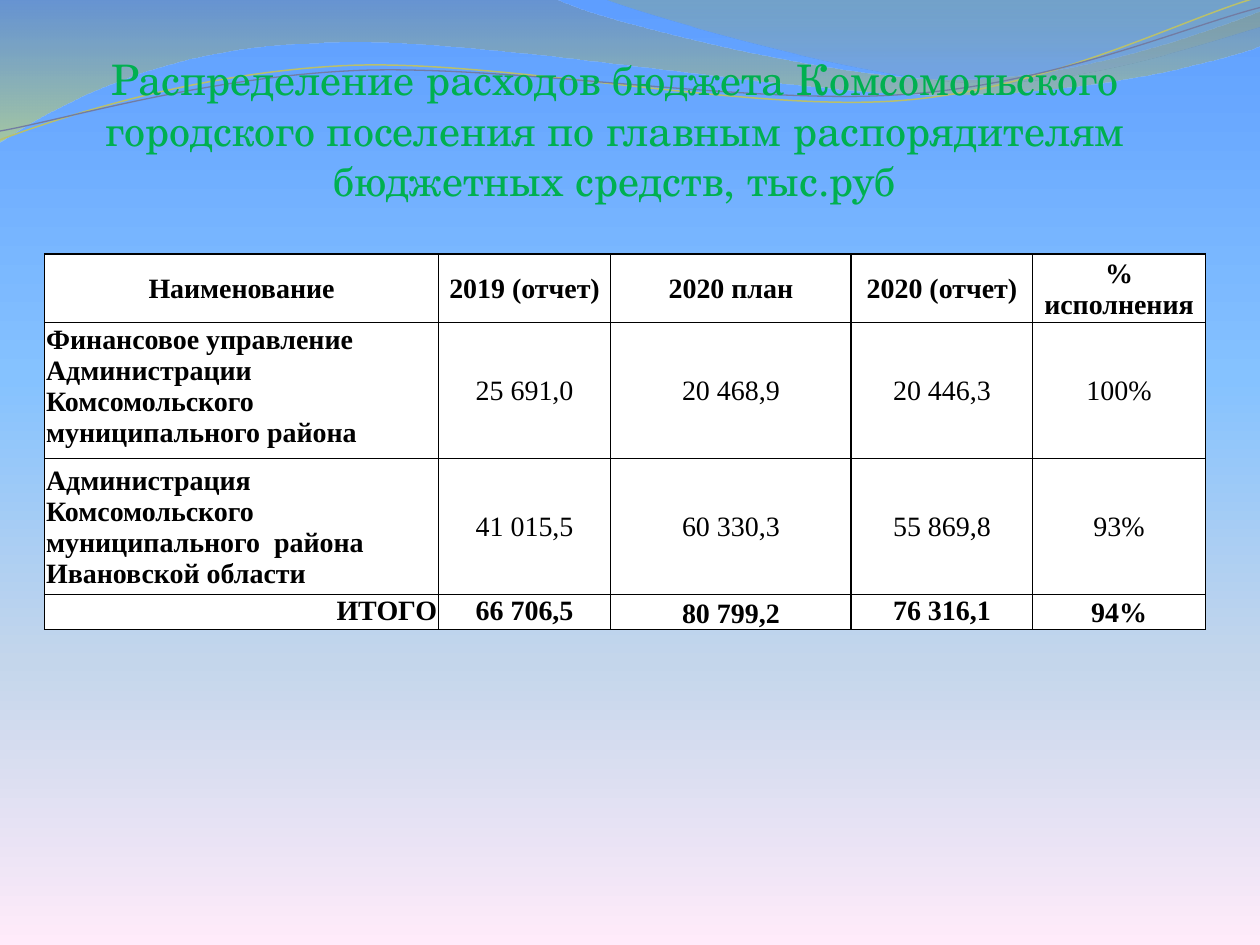
from dataclasses import dataclass

from pptx import Presentation
from pptx.dml.color import RGBColor
from pptx.enum.text import MSO_ANCHOR as Anchor, PP_ALIGN as Align
from pptx.oxml import parse_xml
from pptx.oxml.ns import nsdecls, qn
from pptx.util import Cm, Pt

COLORS = {
    "title": "00B050", "text": "000000", "cell": "FFFFFF", "border": "000000",
    "sky": "5E9EFF", "light sky": "85C2FF", "haze": "C4D6EB", "pink": "FFEBFA",
    "slate": "72889B", "lime": "D3DE57", "olive": "A4AC50", "steel": "84A3BD",
    "yellow line": "B9C06C", "grey line": "727CA3",
}
UNITS = 1000  # path units to the inch; wave coordinates are in inches

Point = tuple[float, float]


@dataclass
class Stop:
    position: int
    color: str
    opacity: int = 100


@dataclass
class Wave:
    """A segment of one point is straight, one of three points is a cubic curve."""
    start: Point
    segments: list[tuple[Point, ...]]
    stops: list[Stop] | None = None
    line: str = ""
    width: float = 0


@dataclass
class Cell:
    text: str
    bold: bool = False
    align: Align = Align.CENTER
    anchor: Anchor = Anchor.MIDDLE


SKY = [Stop(0, "sky"), Stop(40, "light sky"), Stop(70, "haze"), Stop(100, "pink")]

WAVES = [
    Wave((0, 0),
         [((4.4, -0.01),),
          ((4.76, 0.17), (6.64, 0.63), (7.58, 0.63)),
          ((8.53, 0.63), (9.58, 0.26), (10, 0.09)),
          ((10.01, 0.36),),
          ((9.83, 0.44), (8.7, 0.76), (7.46, 0.75)),
          ((6.22, 0.75), (3.82, 0.28), (2.57, 0.34)),
          ((1.29, 0.36), (0.46, 0.83), (-0.01, 1.13))],
         [Stop(0, "slate", 45), Stop(100, "lime", 55)]),
    Wave((4.79, -0.01),
         [((5.09, 0.11), (6.82, 0.62), (7.69, 0.65)),
          ((8.56, 0.69), (9.61, 0.32), (10, 0.21)),
          ((10, 0),)],
         [Stop(0, "olive", 30), Stop(80, "steel", 45)]),
    Wave((0, 1.11),
         [((0.48, 0.93), (1.58, 0.57), (2.77, 0.52)),
          ((3.95, 0.47), (5.93, 0.89), (7.13, 0.8)),
          ((8.33, 0.71), (9.38, 0.15), (9.98, -0.02))],
         line="yellow line", width=0.85),
    Wave((0, 1.04),
         [((0.47, 0.96), (1.64, 0.61), (2.83, 0.56)),
          ((4.03, 0.51), (5.97, 0.84), (7.17, 0.75)),
          ((8.36, 0.67), (9.41, 0.21), (10, 0.06))],
         line="grey line", width=0.75),
]

TITLE = ("Распределение расходов бюджета Комсомольского городского поселения "
         "по главным распорядителям бюджетных средств, тыс.руб")
HEADERS = ["Наименование", "2019 (отчет)", "2020 план", "2020 (отчет)", "% исполнения"]
ROWS = [
    [Cell(text, True) for text in HEADERS],
    [Cell("Финансовое управление Администрации Комсомольского муниципального района",
          True, Align.LEFT, Anchor.TOP),
     Cell("25 691,0"), Cell("20 468,9"), Cell("20 446,3"), Cell("100%")],
    [Cell("Администрация Комсомольского муниципального  района Ивановской области",
          True, Align.LEFT),
     Cell("41 015,5"), Cell("60 330,3"), Cell("55 869,8"), Cell("93%")],
    [Cell("ИТОГО", True, Align.RIGHT, Anchor.TOP),
     Cell("66 706,5", True, anchor=Anchor.TOP), Cell("80 799,2", True, anchor=Anchor.BOTTOM),
     Cell("76 316,1", True, anchor=Anchor.TOP), Cell("94%", True)],
]
COLUMN_WIDTHS = [7.94, 3.47, 4.85, 3.66, 3.48]
ROW_HEIGHTS = [0.79, 1.96, 1.57, 0.38]  # least heights: rows grow with their text


def rgb(name: str) -> RGBColor:
    return RGBColor.from_string(COLORS[name])


def set_gradient(fill, element, stops: list[Stop]) -> None:
    """Fill from top to bottom with any number of stops."""
    fill.gradient()
    fill.gradient_angle = 270
    gs_list = next(element.iter(qn("a:gsLst")))
    for gs in list(gs_list):
        gs_list.remove(gs)
    for stop in stops:
        gs_list.append(parse_xml(
            f'<a:gs {nsdecls("a")} pos="{stop.position * 1000}">'
            f'<a:srgbClr val="{COLORS[stop.color]}">'
            f'<a:alpha val="{stop.opacity * 1000}"/></a:srgbClr></a:gs>'))


def to_units(point: Point) -> tuple[int, int]:
    return round(point[0] * UNITS), round(point[1] * UNITS)


def bend_segments(sp, wave: Wave, left: int, top: int) -> None:
    """Turn the straight segments of the outline into cubic curves."""
    straight = list(sp._element.iter(qn("a:lnTo")))
    for line, segment in zip(straight, wave.segments):
        if len(segment) == 3:
            points = "".join(f'<a:pt x="{x - left}" y="{y - top}"/>'
                             for x, y in map(to_units, segment))
            line.getparent().replace(line, parse_xml(
                f'<a:cubicBezTo {nsdecls("a")}>{points}</a:cubicBezTo>'))


def add_wave(slide, wave: Wave) -> None:
    points = [to_units(p) for p in [wave.start, *(s[-1] for s in wave.segments)]]
    builder = slide.shapes.build_freeform(*points[0], scale=Cm(2.54) / UNITS)
    builder.add_line_segments(points[1:], close=bool(wave.stops))
    sp = builder.convert_to_shape()
    bend_segments(sp, wave, min(x for x, _ in points), min(y for _, y in points))
    sp.shadow.inherit = False
    if wave.stops:
        set_gradient(sp.fill, sp._element, wave.stops)
        sp.line.fill.background()
    else:
        sp.fill.background()
        sp.line.color.rgb = rgb(wave.line)
        sp.line.width = Pt(wave.width)


def set_font(p, name: str, size: int, color: str, bold: bool = False) -> None:
    p.font.name = name
    p.font.size = Pt(size)
    p.font.bold = bold
    p.font.color.rgb = rgb(color)


def add_title(slide) -> None:
    tf = slide.shapes.add_textbox(Cm(0.3), Cm(1.13), Cm(24.2), Cm(3)).text_frame
    tf.word_wrap = True
    tf.vertical_anchor = Anchor.BOTTOM
    tf.margin_left = tf.margin_right = tf.margin_bottom = 0
    p = tf.paragraphs[0]
    p.text = TITLE
    p.alignment = Align.CENTER
    set_font(p, "TeX Gyre Schola", 24, "title")


def set_borders(cell) -> None:
    properties = cell._tc.get_or_add_tcPr()
    for i, side in enumerate(("lnL", "lnR", "lnT", "lnB")):
        properties.insert(i, parse_xml(
            f'<a:{side} {nsdecls("a")} w="{Pt(1)}"><a:solidFill>'
            f'<a:srgbClr val="{COLORS["border"]}"/></a:solidFill></a:{side}>'))


def fill_cell(cell, content: Cell) -> None:
    cell.fill.solid()
    cell.fill.fore_color.rgb = rgb("cell")
    cell.margin_left = cell.margin_right = cell.margin_top = Cm(0.03)
    cell.margin_bottom = 0
    cell.vertical_anchor = content.anchor
    p = cell.text_frame.paragraphs[0]
    p.text = content.text
    p.alignment = content.align
    set_font(p, "Times New Roman", 16, "text", content.bold)
    set_borders(cell)


def add_budget_table(slide) -> None:
    frame = slide.shapes.add_table(
        len(ROWS), len(COLUMN_WIDTHS), Cm(0.9), Cm(5.12),
        Cm(sum(COLUMN_WIDTHS)), Cm(sum(ROW_HEIGHTS)))
    table = frame.table
    table.first_row = table.horz_banding = False
    for column, width in zip(table.columns, COLUMN_WIDTHS):
        column.width = Cm(width)
    for row, height, contents in zip(table.rows, ROW_HEIGHTS, ROWS):
        row.height = Cm(height)
        for cell, content in zip(row.cells, contents):
            fill_cell(cell, content)
    frame.height = Cm(7.52)


def main() -> None:
    prs = Presentation()
    prs.slide_width, prs.slide_height = Cm(25.4), Cm(19.05)
    slide = prs.slides.add_slide(prs.slide_layouts[6])
    set_gradient(slide.background.fill, slide._element, SKY)
    for wave in WAVES:
        add_wave(slide, wave)
    add_title(slide)
    add_budget_table(slide)
    prs.save("out.pptx")


if __name__ == "__main__":
    main()
